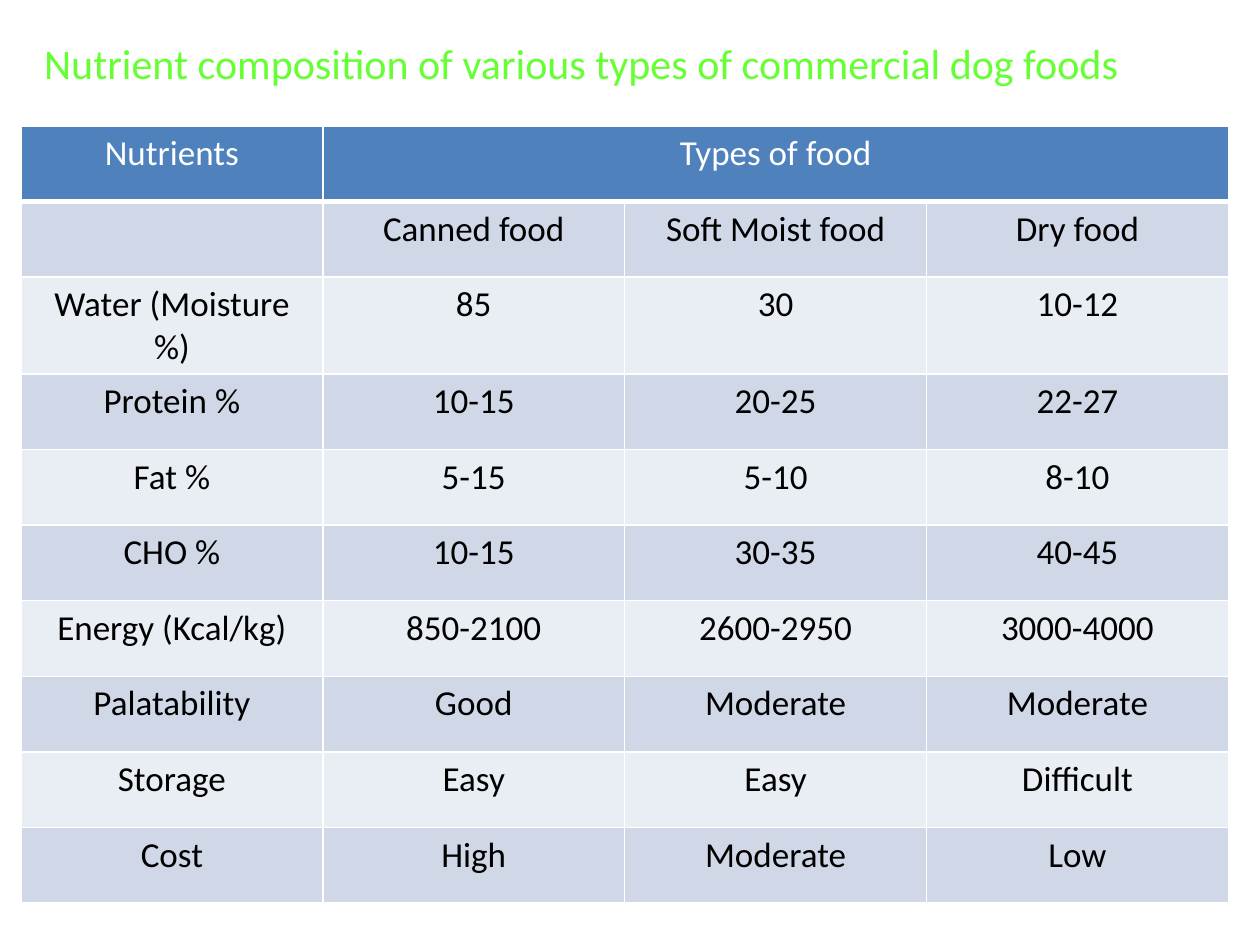
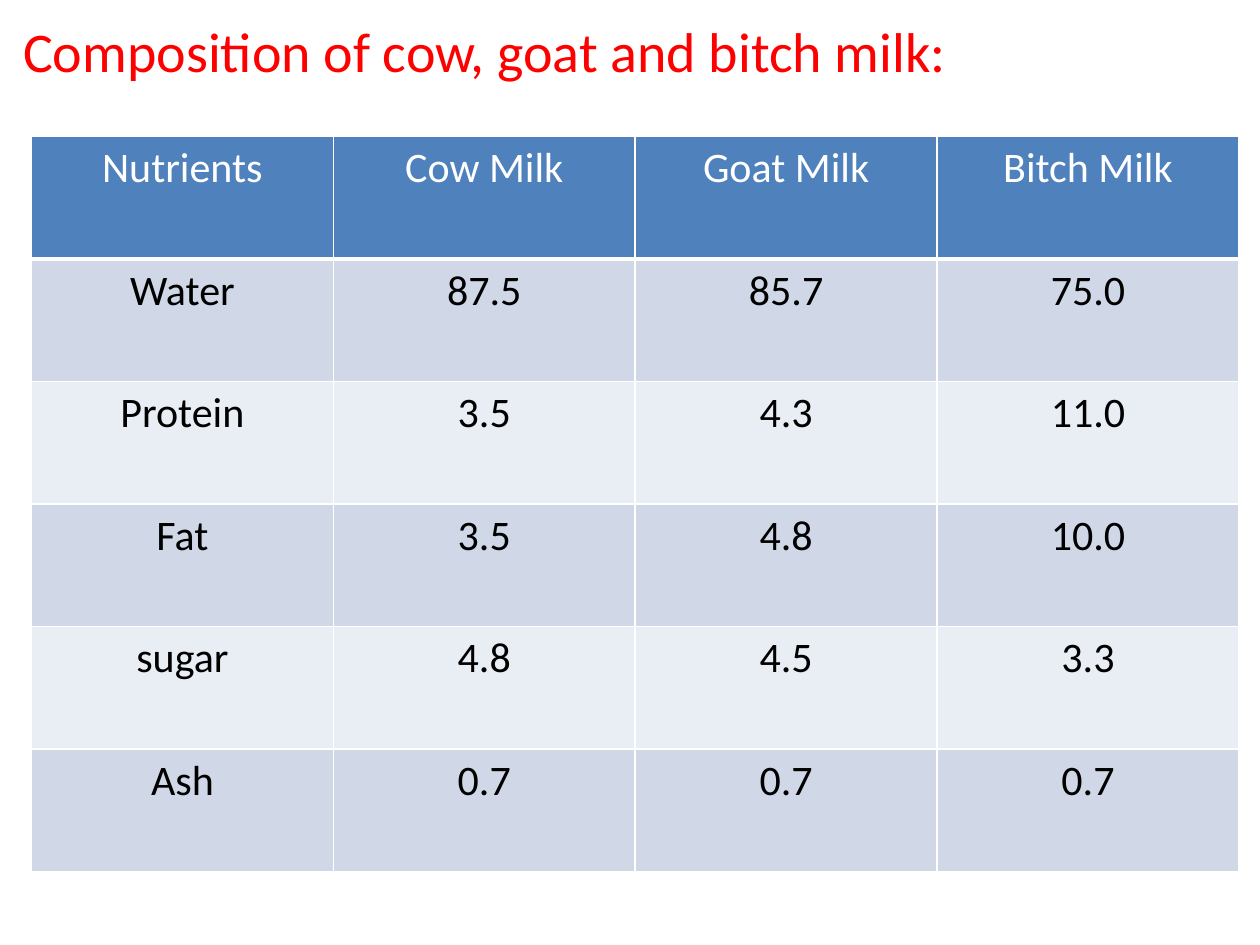
from dataclasses import dataclass
from typing import Any, NamedTuple

from lxml.etree import SubElement
from pptx import Presentation
from pptx.dml.color import RGBColor as Rgb
from pptx.enum.text import MSO_ANCHOR as Anchor, MSO_AUTO_SIZE as AutoSize, PP_ALIGN as Align
from pptx.oxml.ns import qn
from pptx.util import Emu, Pt

PX = 7620  # EMU in one px, 120 px to the inch
TITLE_ONLY = 5


@dataclass(frozen=True)
class Theme:
    font: str = "Calibri"
    header_fill: str = "4F81BD"
    header_text: str = "FFFFFF"
    body_text: str = "000000"
    band_fills: tuple[str, str] = ("D0D8E8", "E9EDF4")
    border: str = "FFFFFF"
    thin_border: int = 1
    header_rule: int = 3
    food_title: str = "66FF33"
    milk_title: str = "FF0000"
    small: int = 20
    medium: int = 24
    large: int = 32


THEME = Theme()


class Box(NamedTuple):
    left: int
    top: int
    width: int
    height: int

    def emu(self) -> list[Emu]:
        return [Emu(side * PX) for side in self]


class Title(NamedTuple):
    text: str
    box: Box
    size: int
    colour: str
    wrap: bool
    auto_size: AutoSize


class Grid(NamedTuple):
    box: Box
    size: int
    rows: list[list[str]]
    header_span: tuple[int, int] | None = None


class TablePage(NamedTuple):
    title: Title
    grid: Grid


PAGES = [
    TablePage(
        Title("Nutrient composition of various types of commercial dog foods",
              Box(30, 30, 1139, 60), THEME.medium, THEME.food_title, False,
              AutoSize.SHAPE_TO_FIT_TEXT),
        Grid(Box(20, 120, 1150, 720), THEME.small, [
            ["Nutrients", "Types of food", "", ""],
            ["", "Canned food", "Soft Moist food", "Dry food"],
            ["Water (Moisture %)", "85", "30", "10-12"],
            ["Protein %", "10-15", "20-25", "22-27"],
            ["Fat %", "5-15", "5-10", "8-10"],
            ["CHO %", "10-15", "30-35", "40-45"],
            ["Energy (Kcal/kg)", "850-2100", "2600-2950", "3000-4000"],
            ["Palatability", "Good", "Moderate", "Moderate"],
            ["Storage", "Easy", "Easy", "Difficult"],
            ["Cost", "High", "Moderate", "Low"],
        ], header_span=(1, 3)),
    ),
    TablePage(
        Title("Composition of cow, goat and bitch milk:",
              Box(10, 10, 1170, 874), THEME.large, THEME.milk_title, True,
              AutoSize.NONE),
        Grid(Box(30, 130, 1150, 700), THEME.medium, [
            ["Nutrients", "Cow Milk", "Goat Milk", "Bitch Milk"],
            ["Water", "87.5", "85.7", "75.0"],
            ["Protein", "3.5", "4.3", "11.0"],
            ["Fat", "3.5", "4.8", "10.0"],
            ["sugar", "4.8", "4.5", "3.3"],
            ["Ash", "0.7", "0.7", "0.7"],
        ]),
    ),
]


def set_attributes(target: Any, values: dict[str, Any]) -> None:
    for name, value in values.items():
        setattr(target, name, value)


def write(frame: Any, text: str, size: int, colour: str, align: Align) -> None:
    para = frame.paragraphs[0]
    para.alignment = align
    span = para.add_run()
    span.text = text
    set_attributes(span.font, {"name": THEME.font, "size": Pt(size), "bold": False})
    span.font.color.rgb = Rgb.from_string(colour)


def draw_borders(cell: Any, bottom: int) -> None:
    """Add the four edges; call before the fill, which must follow them in the XML."""
    properties = cell._tc.get_or_add_tcPr()
    thin = THEME.thin_border
    for edge, width in {"lnL": thin, "lnR": thin, "lnT": thin, "lnB": bottom}.items():
        line = SubElement(properties, qn(f"a:{edge}"), w=str(Pt(width)))
        fill = SubElement(line, qn("a:solidFill"))
        SubElement(fill, qn("a:srgbClr"), val=THEME.border)


def draw_title(page: Any, title: Title) -> None:
    shape = page.shapes.title
    set_attributes(shape, dict(zip(Box._fields, title.box.emu())))
    set_attributes(shape.text_frame, {
        "word_wrap": title.wrap,
        "auto_size": title.auto_size,
        "vertical_anchor": Anchor.TOP,
    })
    write(shape.text_frame, title.text, title.size, title.colour, Align.LEFT)


def draw_grid(page: Any, grid: Grid) -> None:
    table = page.shapes.add_table(len(grid.rows), len(grid.rows[0]), *grid.box.emu()).table
    for row, texts in enumerate(grid.rows):
        is_header = row == 0
        fill = THEME.header_fill if is_header else THEME.band_fills[(row - 1) % 2]
        colour = THEME.header_text if is_header else THEME.body_text
        bottom = THEME.header_rule if is_header else THEME.thin_border
        for column, text in enumerate(texts):
            cell = table.cell(row, column)
            draw_borders(cell, bottom)
            cell.fill.solid()
            cell.fill.fore_color.rgb = Rgb.from_string(fill)
            if text:
                write(cell.text_frame, text, grid.size, colour, Align.CENTER)
    if grid.header_span:
        first, last = grid.header_span
        table.cell(0, first).merge(table.cell(0, last))


def main() -> None:
    deck = Presentation()
    set_attributes(deck, {"slide_width": Emu(1200 * PX), "slide_height": Emu(900 * PX)})
    for content in PAGES:
        page = deck.slides.add_slide(deck.slide_layouts[TITLE_ONLY])
        draw_title(page, content.title)
        draw_grid(page, content.grid)
    deck.save("out.pptx")


if __name__ == "__main__":
    main()
